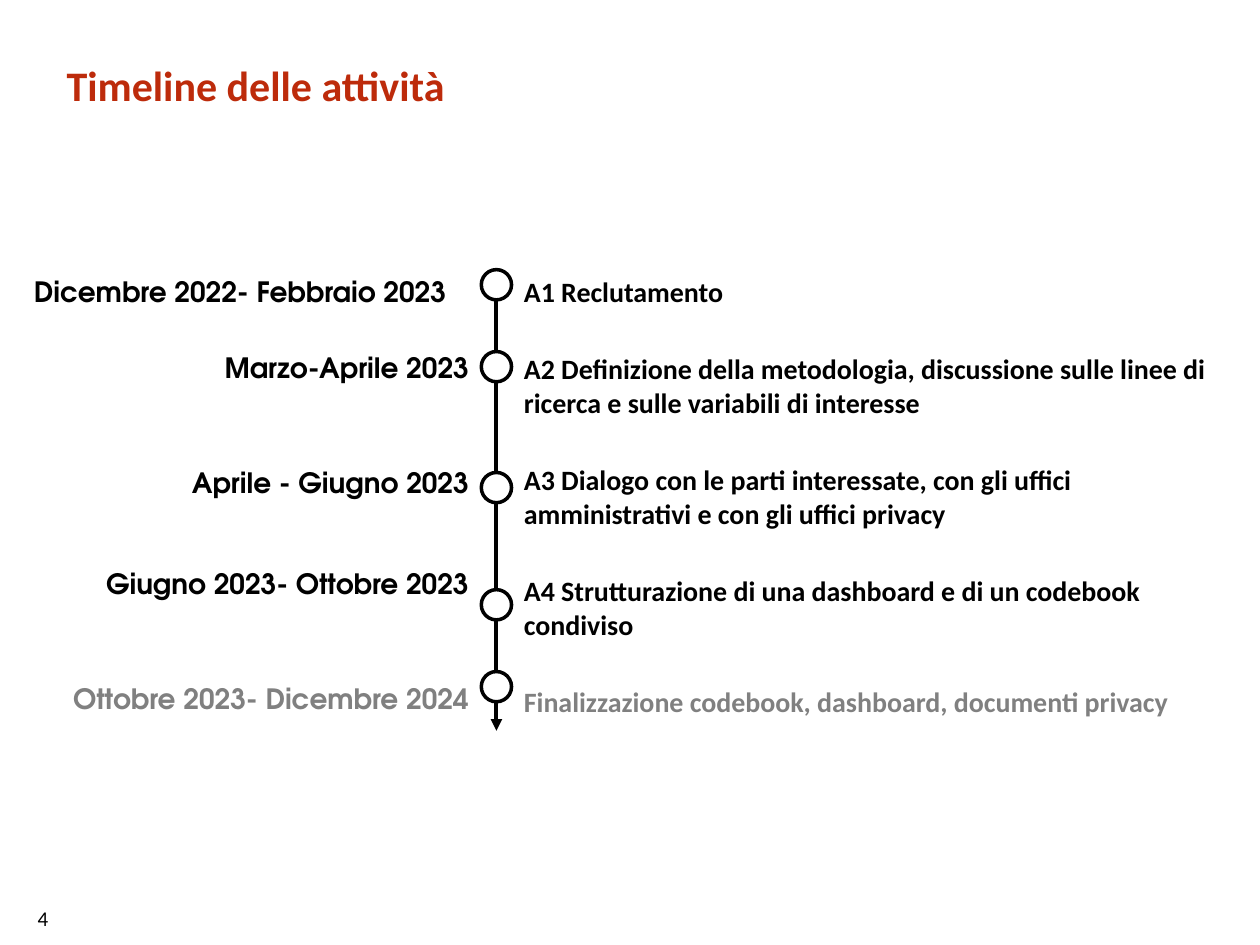
"""Build the project activity timeline slide."""
from lxml import etree
from pptx import Presentation
from pptx.dml.color import RGBColor
from pptx.enum.shapes import MSO_CONNECTOR, MSO_SHAPE
from pptx.enum.text import PP_ALIGN
from pptx.oxml.ns import qn
from pptx.util import Inches, Pt

BLACK = RGBColor(0x00, 0x00, 0x00)
WHITE = RGBColor(0xFF, 0xFF, 0xFF)
RED = RGBColor(0xBD, 0x2B, 0x0B)
GRAY = RGBColor(0x80, 0x80, 0x80)
LEFT, RIGHT = PP_ALIGN.LEFT, PP_ALIGN.RIGHT
STRAIGHT = MSO_CONNECTOR.STRAIGHT
OVAL = MSO_SHAPE.OVAL
BODY_FONT, DATE_FONT = "Calibri", "TeX Gyre Adventor"

TITLE = "Timeline delle attività"
PAGE_NUMBER = "4"
PERIODS = [
    ("Dicembre 2022- Febbraio 2023", BLACK, LEFT, 0),
    ("Marzo-Aprile 2023", BLACK, RIGHT, 24),
    ("Aprile - Giugno 2023", BLACK, RIGHT, 47),
    ("Giugno 2023- Ottobre 2023", BLACK, RIGHT, 38.5),
    ("Ottobre 2023- Dicembre 2024", GRAY, RIGHT, 46.5),
]
ACTIVITIES = [
    ("A1 Reclutamento", BLACK),
    ("A2 Definizione della metodologia, discussione sulle linee di ricerca "
     "e sulle variabili di interesse", BLACK),
    ("A3 Dialogo con le parti interessate, con gli uffici amministrativi "
     "e con gli uffici privacy", BLACK),
    ("A4 Strutturazione di una dashboard e di un codebook condiviso", BLACK),
    ("Finalizzazione codebook, dashboard, documenti privacy", GRAY),
]
ACTIVITY_GAP = 25
AXIS_X, AXIS_TOP, AXIS_BOTTOM = 3.94, 2.14, 5.8
NODE_TOPS = [2.14, 2.79, 3.75, 4.68, 5.33]
NODE_SIZE = 0.24


def add_text(slide, box, rows, font_name, size, bold=True):
    """Add a text box with one paragraph per (text, color, alignment, gap) row."""
    text_frame = slide.shapes.add_textbox(*map(Inches, box)).text_frame
    text_frame.word_wrap = True
    text_frame.text = "\n".join(row[0] for row in rows)
    for paragraph, (_, color, alignment, gap) in zip(text_frame.paragraphs, rows):
        paragraph.alignment = alignment
        paragraph.space_before = Pt(gap)
        font = paragraph.runs[0].font
        font.name, font.size, font.bold = font_name, Pt(size), bold
        font.color.rgb = color
    return text_frame


def add_axis(slide):
    """Draw the vertical time arrow."""
    axis = slide.shapes.add_connector(
        STRAIGHT, Inches(AXIS_X), Inches(AXIS_TOP), Inches(AXIS_X), Inches(AXIS_BOTTOM))
    axis.line.color.rgb = BLACK
    axis.line.width = Pt(2.25)
    etree.SubElement(axis.line._get_or_add_ln(), qn("a:tailEnd"), type="triangle")
    etree.SubElement(axis._element.spPr, qn("a:effectLst"))


def add_node(slide, top):
    """Draw one milestone circle centred on the axis."""
    node = slide.shapes.add_shape(
        OVAL, Inches(AXIS_X - NODE_SIZE / 2), Inches(top), Inches(NODE_SIZE), Inches(NODE_SIZE))
    node.shadow.inherit = False
    node.fill.solid()
    node.fill.fore_color.rgb = WHITE
    node.line.color.rgb = BLACK
    node.line.width = Pt(2)


def main():
    """Assemble and save the slide."""
    presentation = Presentation()
    presentation.slide_width, presentation.slide_height = Inches(10), Inches(7.5)
    slide = presentation.slides.add_slide(presentation.slide_layouts[6])

    add_text(slide, (0.2, 7.14, 0.87, 0.3), [(PAGE_NUMBER, BLACK, LEFT, 0)],
             BODY_FONT, 12, bold=False)
    title = add_text(slide, (0.43, 0.52, 9.21, 0.71), [(TITLE, RED, LEFT, 0)], BODY_FONT, 24)
    title.paragraphs[0].line_spacing = Pt(22)

    activity_rows = [(text, color, LEFT, ACTIVITY_GAP if index else 0)
                     for index, (text, color) in enumerate(ACTIVITIES)]
    add_text(slide, (4.06, 2.13, 5.77, 4.38), activity_rows, BODY_FONT, 16)
    add_text(slide, (0.17, 2.13, 3.65, 3.73), PERIODS, DATE_FONT, 16)

    add_axis(slide)
    for top in NODE_TOPS:
        add_node(slide, top)
    presentation.save("out.pptx")


if __name__ == "__main__":
    main()
